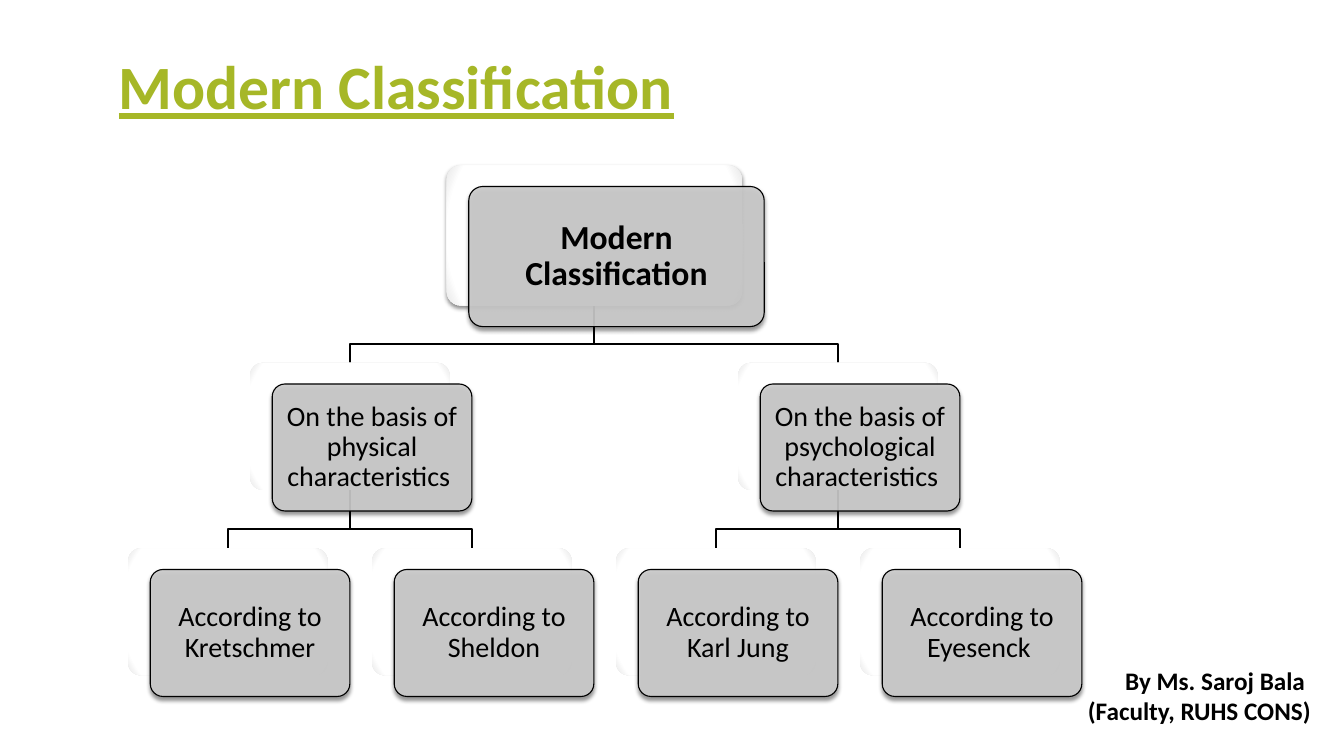
from dataclasses import dataclass

from lxml import etree
from pptx import Presentation, util as u
from pptx.dml.color import RGBColor
from pptx.enum import shapes, text
from pptx.oxml import parse_xml
from pptx.oxml.ns import nsdecls

PX = 9144  # EMU; 100 px to the inch


@dataclass(frozen=True)
class Theme:
    font: str = "Calibri"
    title: str = "A6B727"
    ink: str = "000000"
    card: str = "CCCCCC"
    plate: str = "FFFFFF"
    plate_edge: str = "E7E7E7"
    title_size: int = 44
    root_size: int = 24
    node_size: int = 20
    author_size: int = 18
    elbow_width: float = 1.5
    card_line: float = 0.79


theme = Theme()


def add_run(paragraph, words, size, colour=theme.ink, bold=False):
    run = paragraph.add_run()
    run.text = words
    run.font.name = theme.font
    run.font.size = u.Pt(size)
    run.font.bold = bold
    run.font.color.rgb = RGBColor.from_string(colour)
    return run


def add_rounded(slide, left, top, width, height, shadow):
    """Add a rounded box, with a soft shadow below it if asked."""
    shape = slide.shapes.add_shape(
        shapes.MSO_SHAPE.ROUNDED_RECTANGLE,
        left * PX, top * PX, width * PX, height * PX)
    shape.adjustments[0] = 0.1
    shape.fill.solid()
    shape.line.fill.background()
    shape.shadow.inherit = False
    if shadow:
        effects = shape._element.spPr.find("{*}effectLst")
        effects.append(parse_xml(
            f'<a:outerShdw {nsdecls("a")} blurRad="38100" dist="25400" dir="5400000" '
            f'rotWithShape="0"><a:srgbClr val="{theme.ink}"><a:alpha val="45000"/>'
            '</a:srgbClr></a:outerShdw>'))
    return shape


presentation = Presentation()
presentation.slide_width = 1333 * PX
presentation.slide_height = 750 * PX
slide = presentation.slides.add_slide(presentation.slide_layouts[5])

title = slide.shapes.title
title.left, title.top, title.width, title.height = (
    length * PX for length in (108, 15, 1080, 148))
title.text_frame.auto_size = text.MSO_AUTO_SIZE.NONE
title.text_frame.vertical_anchor = text.MSO_ANCHOR.MIDDLE
paragraph = title.text_frame.paragraphs[0]
paragraph.alignment = text.PP_ALIGN.LEFT
paragraph.line_spacing = 0.9
run = add_run(paragraph, "Modern Classification", theme.title_size, theme.title, bold=True)
run.font.underline = True

# Each level: top, box width, box height, inset, type size, bold
levels = [
    (164, 293, 139, 10, theme.root_size, True),
    (360, 198, 126, 8, theme.node_size, False),
    (544, 198, 126, 8, theme.node_size, False),
]
# Each node: label, level, column, parent's column (counted in leaf steps)
nodes = [
    ("Modern Classification", 0, 1.5, None),
    ("On the basis of physical characteristics ", 1, 0.5, 1.5),
    ("According to Kretschmer", 2, 0, 0.5),
    ("According to Sheldon", 2, 1, 0.5),
    ("On the basis of psychological characteristics ", 1, 2.5, 1.5),
    ("According to Karl Jung", 2, 2, 2.5),
    ("According to Eyesenck ", 2, 3, 2.5),
]
FIRST_LEAF, LEAF_STEP = 226, 242
BUS_RISE = 19
CARD_SHIFT_X, CARD_SHIFT_Y = 22, 21

for label, level, column, parent_column in nodes:
    if parent_column is None:
        continue
    parent_top, _, parent_height, *_ = levels[level - 1]
    child_top = levels[level][0]
    child_x = FIRST_LEAF + int(column * LEAF_STEP)
    parent_x = FIRST_LEAF + int(parent_column * LEAF_STEP)
    bus = child_top - BUS_RISE
    builder = slide.shapes.build_freeform(parent_x, parent_top + parent_height, scale=PX)
    builder.add_line_segments(
        [(parent_x, bus), (child_x, bus), (child_x, child_top)], close=False)
    elbow = builder.convert_to_shape()
    elbow.fill.background()
    elbow.line.color.rgb = RGBColor.from_string(theme.ink)
    elbow.line.width = u.Pt(theme.elbow_width)
    elbow.shadow.inherit = False

for label, level, column, _ in nodes:
    top, width, height, inset, size, bold = levels[level]
    left = FIRST_LEAF + int(column * LEAF_STEP) - width // 2

    plate = add_rounded(slide, left, top, width, height, shadow=level == 0)
    solid = plate._element.spPr.find("{*}solidFill")
    stops = "".join(
        f'<a:gs pos="{position}000"><a:srgbClr val="{colour}"/></a:gs>'
        for position, colour in ((0, theme.plate), (90, theme.plate), (100, theme.plate_edge)))
    solid.getparent().replace(solid, parse_xml(
        f'<a:gradFill {nsdecls("a")} rotWithShape="1"><a:gsLst>{stops}</a:gsLst>'
        '<a:path path="circle"><a:fillToRect l="100000" t="100000" r="100000" b="100000"/>'
        '</a:path></a:gradFill>'))

    card = add_rounded(slide, left + CARD_SHIFT_X, top + CARD_SHIFT_Y, width, height, shadow=True)
    card.fill.fore_color.rgb = RGBColor.from_string(theme.card)
    colour = card._element.spPr.find("{*}solidFill/{*}srgbClr")
    etree.SubElement(colour, colour.tag.replace("srgbClr", "alpha"), val="90000")
    card.line.color.rgb = RGBColor.from_string(theme.ink)
    card.line.width = u.Pt(theme.card_line)

    frame = card.text_frame
    frame.word_wrap = True
    frame.vertical_anchor = text.MSO_ANCHOR.MIDDLE
    frame.margin_left = frame.margin_right = inset * PX
    frame.margin_top = frame.margin_bottom = inset * PX
    paragraph = frame.paragraphs[0]
    paragraph.alignment = text.PP_ALIGN.CENTER
    paragraph.line_spacing = 0.9
    add_run(paragraph, label, size, bold=bold)

author = slide.shapes.add_textbox(1066 * PX, 655 * PX, 244 * PX, 71 * PX)
frame = author.text_frame
frame.word_wrap = False
frame.auto_size = text.MSO_AUTO_SIZE.SHAPE_TO_FIT_TEXT
for index, words in enumerate(["By Ms. Saroj Bala ", "(Faculty, RUHS CONS)"]):
    paragraph = frame.add_paragraph() if index else frame.paragraphs[0]
    paragraph.alignment = text.PP_ALIGN.RIGHT
    add_run(paragraph, words, theme.author_size, bold=True)

presentation.save("out.pptx")
